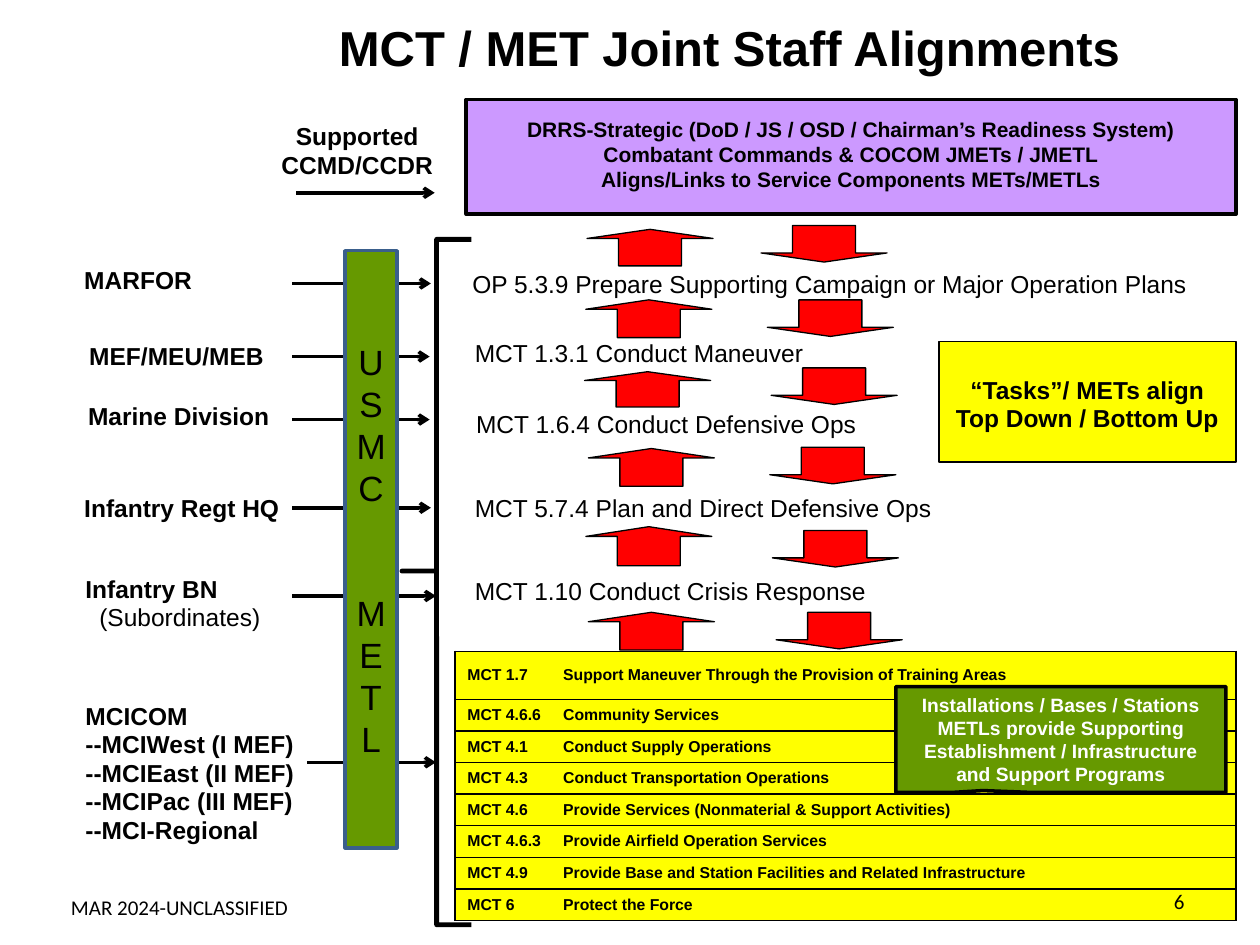
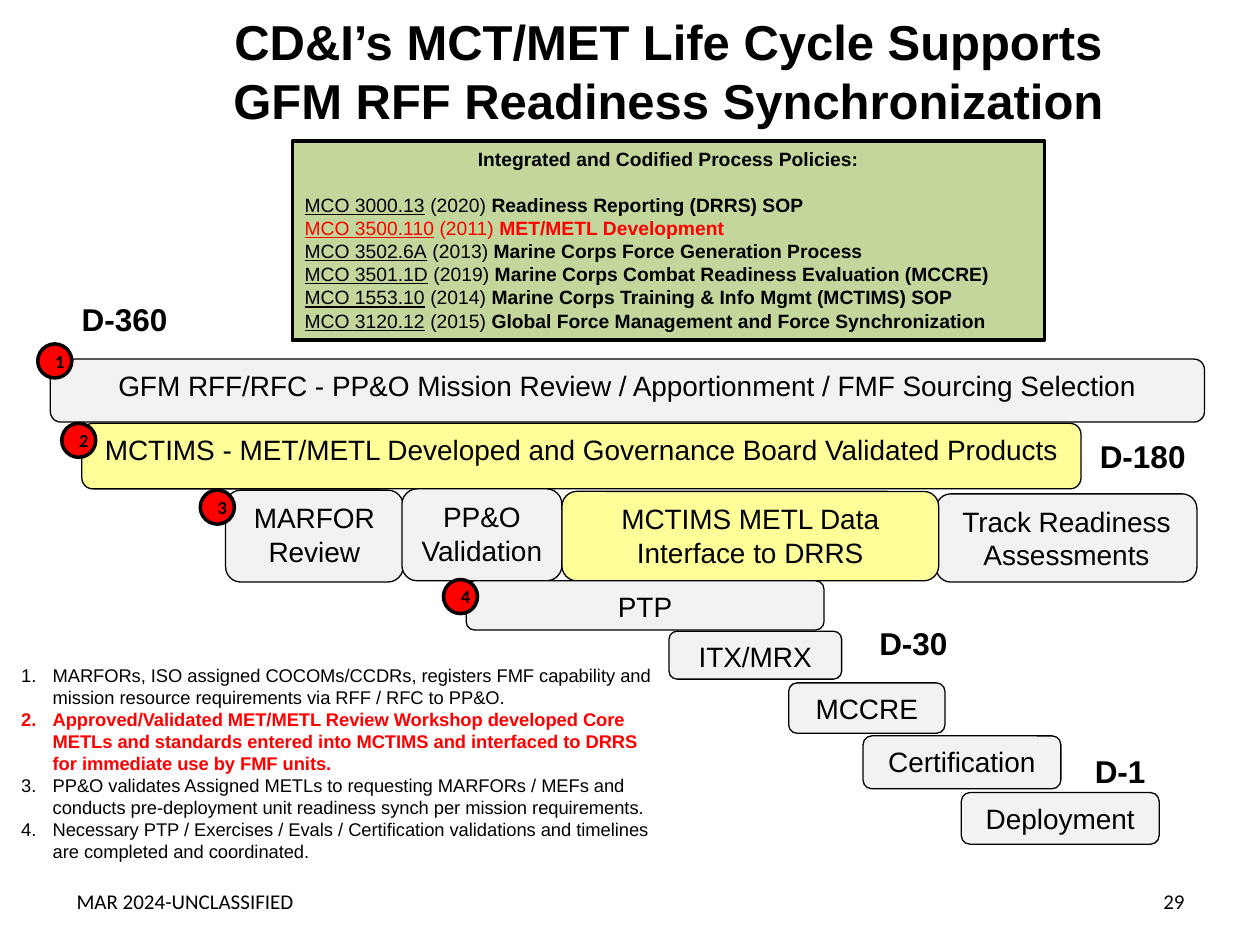
from dataclasses import dataclass

from lxml import etree
from pptx import Presentation
from pptx import util as u
from pptx.dml.color import RGBColor
from pptx.enum import shapes, text
from pptx.oxml import ns

SHAPE = shapes.MSO_SHAPE
ALIGN = text.PP_ALIGN
MIDDLE = text.MSO_ANCHOR.MIDDLE


@dataclass(frozen=True)
class Theme:
    black: str = "000000"
    white: str = "FFFFFF"
    red: str = "FF0000"
    yellow: str = "FFFF00"
    pale_yellow: str = "FFFF99"
    purple: str = "CC99FF"
    green: str = "669900"
    pale_green: str = "C3D69B"
    gray: str = "F2F2F2"
    blue: str = "3A5F8C"
    body_font: str = "Arial"
    footer_font: str = "Calibri"
    title: float = 28
    bar: float = 20
    marker: float = 18
    stage: float = 16
    label: float = 14
    banner: float = 12
    footer: float = 12
    note: float = 11
    step: float = 10.5
    row: float = 9


THEME = Theme()


def add_xml(parent, tag, **attributes):
    return etree.SubElement(parent, ns.qn(tag), attributes)


def write(frame, paragraphs, size=THEME.label, color=THEME.black, bold=False,
          font=THEME.body_font, align=ALIGN.LEFT, anchor=None, tight=False,
          wrap=True, insets=None, numbered=False, tab=None):
    """Fill a text frame with paragraphs, each a string or a list of (text, overrides) runs."""
    frame.word_wrap = wrap
    if anchor is not None:
        frame.vertical_anchor = anchor
    if insets:
        (frame.margin_left, frame.margin_top,
         frame.margin_right, frame.margin_bottom) = map(u.Inches, insets)
    for index, runs in enumerate(paragraphs):
        paragraph = frame.add_paragraph() if index else frame.paragraphs[0]
        paragraph.alignment = align
        if tight:
            paragraph.line_spacing = 0.8
            if index:
                paragraph.space_before = u.Pt(size * 0.2)
        properties = paragraph._p.get_or_add_pPr()
        if numbered:
            properties.set("marL", str(u.Inches(0.25)))
            properties.set("indent", str(-u.Inches(0.25)))
            add_xml(properties, "a:buAutoNum", type="arabicPeriod")
        if tab:
            stops = add_xml(properties, "a:tabLst")
            add_xml(stops, "a:tab", pos=str(u.Inches(tab)), algn="l")
        for words, changes in [(runs, {})] if isinstance(runs, str) else runs:
            run = paragraph.add_run()
            run.text = words
            run.font.name = font
            run.font.size = u.Pt(size)
            run.font.bold = changes.get("bold", bold)
            run.font.underline = changes.get("underline", False)
            run.font.color.rgb = RGBColor.from_string(changes.get("color", color))
    return frame


class Deck:
    """Hold the presentation, its theme and the slide being built."""

    def __init__(self, theme):
        self.theme = theme
        self.presentation = Presentation()
        self.presentation.slide_width = u.Inches(10)
        self.presentation.slide_height = u.Inches(7.5)
        self.slide = None

    def new_slide(self, title, title_at):
        self.slide = self.presentation.slides.add_slide(self.presentation.slide_layouts[6])
        self.label(title_at, title, size=self.theme.title, bold=True,
                   align=ALIGN.CENTER, anchor=MIDDLE)

    def label(self, at, paragraphs, **style):
        box = self.slide.shapes.add_textbox(*map(u.Inches, at))
        return write(box.text_frame, paragraphs, **style)

    def shape(self, kind, at, fill=None, line=THEME.black, weight=0.75,
              adjustments=(), rotation=0, paragraphs=(), **style):
        shape = self.slide.shapes.add_shape(kind, *map(u.Inches, at))
        shape.shadow.inherit = False
        shape.rotation = rotation
        for index, value in enumerate(adjustments):
            shape.adjustments[index] = value
        if fill:
            shape.fill.solid()
            shape.fill.fore_color.rgb = RGBColor.from_string(fill)
        else:
            shape.fill.background()
        shape.line.color.rgb = RGBColor.from_string(line)
        shape.line.width = u.Pt(weight)
        return write(shape.text_frame, paragraphs, **{"align": ALIGN.CENTER, **style})

    def arrow(self, left, right, top):
        connector = self.slide.shapes.add_connector(
            shapes.MSO_CONNECTOR.STRAIGHT, *map(u.Inches, (left, top, right, top)))
        connector.line.color.rgb = RGBColor.from_string(self.theme.black)
        connector.line.width = u.Pt(2)
        properties = connector._element.spPr
        add_xml(properties.find(ns.qn("a:ln")), "a:tailEnd", type="arrow")
        add_xml(properties, "a:effectLst")

    def table(self, at, heights, rows):
        left, top, width = at
        frame = self.slide.shapes.add_table(
            len(rows), 1, *map(u.Inches, (left, top, width, sum(heights))))
        table = frame.table
        table.first_row = table.horz_banding = False
        for index, (code, task) in enumerate(rows):
            table.rows[index].height = u.Inches(heights[index])
            cell = table.cell(index, 0)
            cell.vertical_anchor = MIDDLE
            write(cell.text_frame, [f"{code}\t{task}"], size=self.theme.row, bold=True, tab=0.76)
            properties = cell._tc.get_or_add_tcPr()
            for side in ("a:lnL", "a:lnR", "a:lnT", "a:lnB"):
                border = add_xml(properties, side, w=str(u.Pt(1)))
                add_xml(add_xml(border, "a:solidFill"), "a:srgbClr", val=self.theme.black)
            cell.fill.solid()
            cell.fill.fore_color.rgb = RGBColor.from_string(self.theme.yellow)

    def footer(self, number, top, width):
        style = dict(size=self.theme.footer, font=self.theme.footer_font, anchor=MIDDLE)
        self.label((0, top, width, 0.4), ["MAR 2024-UNCLASSIFIED"], align=ALIGN.CENTER, **style)
        self.label((7.17, 6.95, 2.33, 0.4), [number], align=ALIGN.RIGHT, **style)


def build_alignments(deck):
    theme = deck.theme
    deck.new_slide(["MCT / MET Joint Staff Alignments"], (1.86, 0, 7.86, 0.74))

    deck.label((3.67, 4.52, 6.33, 0.4), ["MCT 1.10 Conduct Crisis Response"])
    for left, top, task in (
            (3.67, 3.91, "MCT 5.7.4 Plan and Direct Defensive Ops"),
            (3.68, 3.24, "MCT 1.6.4 Conduct Defensive Ops"),
            (3.67, 2.68, "MCT 1.3.1 Conduct Maneuver"),
            (3.65, 2.13, "OP 5.3.9 Prepare Supporting Campaign or Major Operation Plans")):
        deck.label((left, top, 6.04, 0.4), [task], tight=True)

    for left, top, unit in (
            (0.57, 2.1, "MARFOR"), (0.61, 2.7, "MEF/MEU/MEB"),
            (0.6, 3.18, "Marine Division"), (0.57, 3.91, "Infantry Regt HQ")):
        deck.label((left, top, 2.68, 0.4), [unit], bold=True, tight=True)
    battalion = deck.label((0.58, 4.55, 2.73, 0.6),
                           ["Infantry BN", [("(Subordinates)", {"bold": False})]],
                           bold=True, tight=True)
    battalion.paragraphs[1]._p.get_or_add_pPr().set("marL", str(u.Inches(0.11)))
    deck.label((0.58, 5.56, 2.3, 1.33),
               ["MCICOM", "--MCIWest (I MEF)", "--MCIEast (II MEF)",
                "--MCIPac (III MEF)", "--MCI-Regional"], bold=True, tight=True)

    deck.shape(SHAPE.LEFT_BRACE, (3.19, 1.9, 0.55, 5.44), weight=2.75, adjustments=(0, 0.484))
    up_arrows = ((4.66, 1.82, 0.29), (4.65, 2.38, 0.3), (4.64, 2.95, 0.28),
                 (4.67, 3.56, 0.3), (4.65, 4.18, 0.31), (4.67, 4.86, 0.3))
    down_arrows = ((6.04, 1.79, 0.29), (6.09, 2.38, 0.29), (6.12, 2.92, 0.29),
                   (6.11, 3.55, 0.29), (6.13, 4.21, 0.29), (6.16, 4.86, 0.29))
    for rotation, arrows in ((0, up_arrows), (180, down_arrows)):
        for left, top, height in arrows:
            deck.shape(SHAPE.UP_ARROW, (left, top, 1, height), theme.red,
                       adjustments=(0.5, 0.25), rotation=rotation)

    deck.table((3.61, 5.17, 6.2), [0.38] + [0.24] * 7, (
        ("MCT 1.7", "Support Maneuver Through the Provision of Training Areas"),
        ("MCT 4.6.6", "Community Services"),
        ("MCT 4.1", "Conduct Supply Operations"),
        ("MCT 4.3", "Conduct Transportation Operations"),
        ("MCT 4.6", "Provide Services (Nonmaterial & Support Activities)"),
        ("MCT 4.6.3", "Provide Airfield Operation Services"),
        ("MCT 4.9", "Provide Base and Station Facilities and Related Infrastructure"),
        ("MCT 6", "Protect the Force")))

    for left, right, top in (
            (2.35, 3.45, 1.53), (2.32, 3.42, 2.25), (2.32, 3.41, 2.83), (2.32, 3.41, 3.33),
            (2.32, 3.42, 4.03), (2.32, 3.46, 4.73), (2.44, 3.46, 6.05)):
        deck.arrow(left, right, top)

    deck.shape(SHAPE.RECTANGLE, (2.74, 1.99, 0.41, 4.74), theme.green, theme.blue, 2)
    for top, word in ((2.57, "USMC"), (4.56, "METL")):
        stack = deck.label((2.74, top, 0.41, 1.6), [word], size=theme.bar,
                           align=ALIGN.CENTER, anchor=MIDDLE, insets=(0, 0, 0, 0))
        stack._txBody.bodyPr.set("vert", "wordArtVert")

    deck.shape(SHAPE.RECTANGULAR_CALLOUT, (7.11, 5.45, 2.62, 0.84), theme.green, weight=2,
               adjustments=(-0.236, 0.482), size=theme.note, color=theme.white, bold=True,
               anchor=MIDDLE, paragraphs=[
                   "Installations / Bases / Stations METLs provide Supporting "
                   "Establishment / Infrastructure and Support Programs"])
    deck.shape(SHAPE.RECTANGLE, (3.7, 0.79, 6.11, 0.91), theme.purple, weight=2,
               size=theme.banner, bold=True, anchor=MIDDLE, insets=(0.1, 0.05, 0.1, 0.09),
               paragraphs=["DRRS-Strategic (DoD / JS / OSD / Chairman’s Readiness System)",
                           "Combatant Commands & COCOM JMETs / JMETL",
                           "Aligns/Links to Service Components METs/METLs"])
    deck.label((1.53, 0.96, 2.61, 0.55), ["Supported", "CCMD/CCDR"],
               bold=True, tight=True, align=ALIGN.CENTER)
    deck.shape(SHAPE.RECTANGLE, (7.45, 2.71, 2.36, 0.96), theme.yellow, weight=1, bold=True,
               tight=True, anchor=text.MSO_ANCHOR.TOP, insets=(0.1, 0.31, 0.1, 0.05),
               paragraphs=["“Tasks”/ METs align", "Top Down / Bottom Up"])
    deck.footer("6", 7, 2.85)


def build_life_cycle(deck):
    theme = deck.theme
    deck.new_slide(["CD&I’s MCT/MET Life Cycle Supports", "GFM RFF Readiness Synchronization"],
                   (1.05, 0, 8.51, 1.12))

    for at, fill, stage in (
            ((0.4, 2.85, 9.16, 0.5), theme.gray,
             "GFM RFF/RFC - PP&O Mission Review / Apportionment / FMF Sourcing Selection"),
            ((0.65, 3.36, 7.93, 0.52), theme.pale_yellow,
             "MCTIMS - MET/METL Developed and Governance Board Validated Products"),
            ((1.79, 3.89, 1.41, 0.73), theme.gray, "MARFOR Review"),
            ((3.19, 3.88, 1.27, 0.73), theme.gray, "PP&O Validation"),
            ((7.43, 3.92, 2.07, 0.7), theme.gray, "Track Readiness Assessments"),
            ((4.46, 3.9, 2.99, 0.71), theme.pale_yellow, "MCTIMS METL Data Interface to DRRS"),
            ((3.7, 4.61, 2.84, 0.39), theme.gray, "PTP"),
            ((5.31, 5.01, 1.37, 0.38), theme.gray, "ITX/MRX"),
            ((6.26, 5.42, 1.24, 0.4), theme.gray, "MCCRE"),
            ((6.85, 5.84, 1.57, 0.42), theme.gray, "Certification"),
            ((7.63, 6.29, 1.57, 0.41), theme.gray, "Deployment")):
        deck.shape(SHAPE.ROUNDED_RECTANGLE, at, fill, size=theme.stage,
                   anchor=text.MSO_ANCHOR.TOP, paragraphs=[stage])

    deck.label((0.07, 5.22, 5.24, 1.69), [
        "MARFORs, ISO assigned COCOMs/CCDRs, registers FMF capability and mission "
        "resource requirements via RFF / RFC to PP&O.",
        [("Approved/Validated MET/METL Review Workshop developed Core METLs and standards "
          "entered into MCTIMS and interfaced to DRRS for immediate use by FMF units.",
          {"color": theme.red, "bold": True})],
        "PP&O validates Assigned METLs to requesting MARFORs / MEFs and conducts "
        "pre-deployment unit readiness synch per mission requirements.",
        "Necessary PTP / Exercises / Evals / Certification validations and timelines "
        "are completed and coordinated."], size=theme.step, numbered=True)

    for left, top, width, day in ((0.55, 2.33, 0.89, "D-360"), (8.63, 3.42, 0.89, "D-180"),
                                  (6.88, 4.9, 0.75, "D-30"), (8.59, 5.92, 0.61, "D-1")):
        deck.label((left, top, width, 0.4), [day], size=theme.marker, bold=True, wrap=False)

    orders = (("MCO 3000.13", "2020", "Readiness Reporting (DRRS) SOP", theme.black),
              ("MCO 3500.110", "2011", "MET/METL Development", theme.red),
              ("MCO 3502.6A", "2013", "Marine Corps Force Generation Process", theme.black),
              ("MCO 3501.1D", "2019", "Marine Corps Combat Readiness Evaluation (MCCRE)",
               theme.black),
              ("MCO 1553.10", "2014", "Marine Corps Training & Info Mgmt (MCTIMS) SOP",
               theme.black),
              ("MCO 3120.12", "2015", "Global Force Management and Force Synchronization",
               theme.black))
    policies = [[(order, {"color": color, "underline": True}), (f" ({year}) ", {"color": color}),
                 (name, {"color": color, "bold": True})] for order, year, name, color in orders]
    heading = [("Integrated and Codified Process Policies:", {"bold": True})]
    frame = deck.shape(SHAPE.RECTANGLE, (2.32, 1.12, 5.97, 1.58), theme.pale_green, weight=2,
                       size=theme.note, align=ALIGN.LEFT, anchor=text.MSO_ANCHOR.TOP,
                       paragraphs=[heading, *policies])
    frame.paragraphs[0].alignment = ALIGN.CENTER
    frame.paragraphs[1].space_before = u.Pt(13)

    for number, (left, top) in enumerate(((0.3, 2.73), (0.49, 3.36), (1.59, 3.89), (3.52, 4.6)), 1):
        deck.shape(SHAPE.FLOWCHART_CONNECTOR, (left, top, 0.27, 0.27), theme.red, weight=2,
                   size=theme.step, font=theme.footer_font, bold=True, anchor=MIDDLE,
                   insets=(0.08, 0, 0, 0), paragraphs=[str(number)])
    deck.footer("29", 6.95, 2.94)


def main():
    deck = Deck(THEME)
    build_alignments(deck)
    build_life_cycle(deck)
    deck.presentation.save("out.pptx")


if __name__ == "__main__":
    main()
